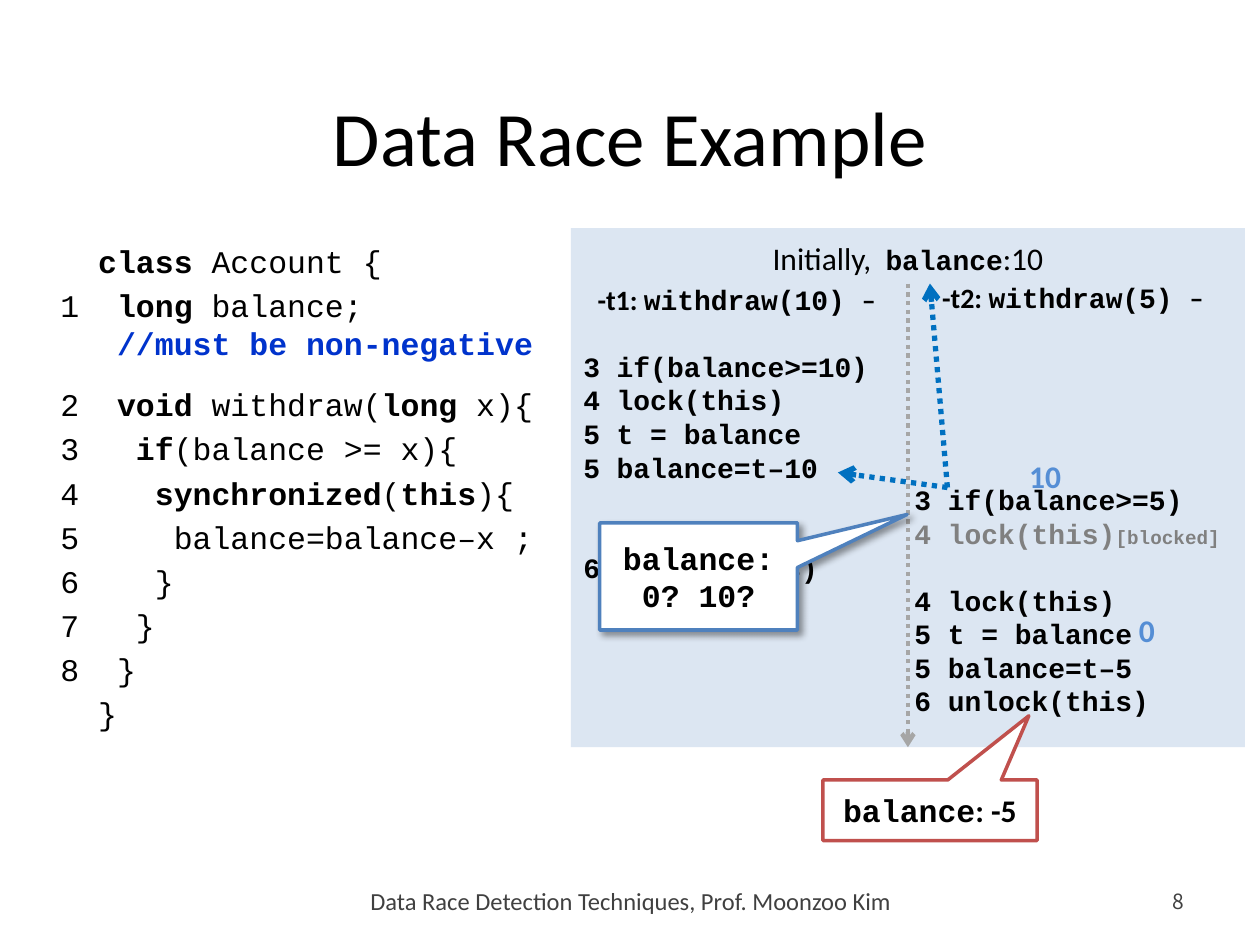
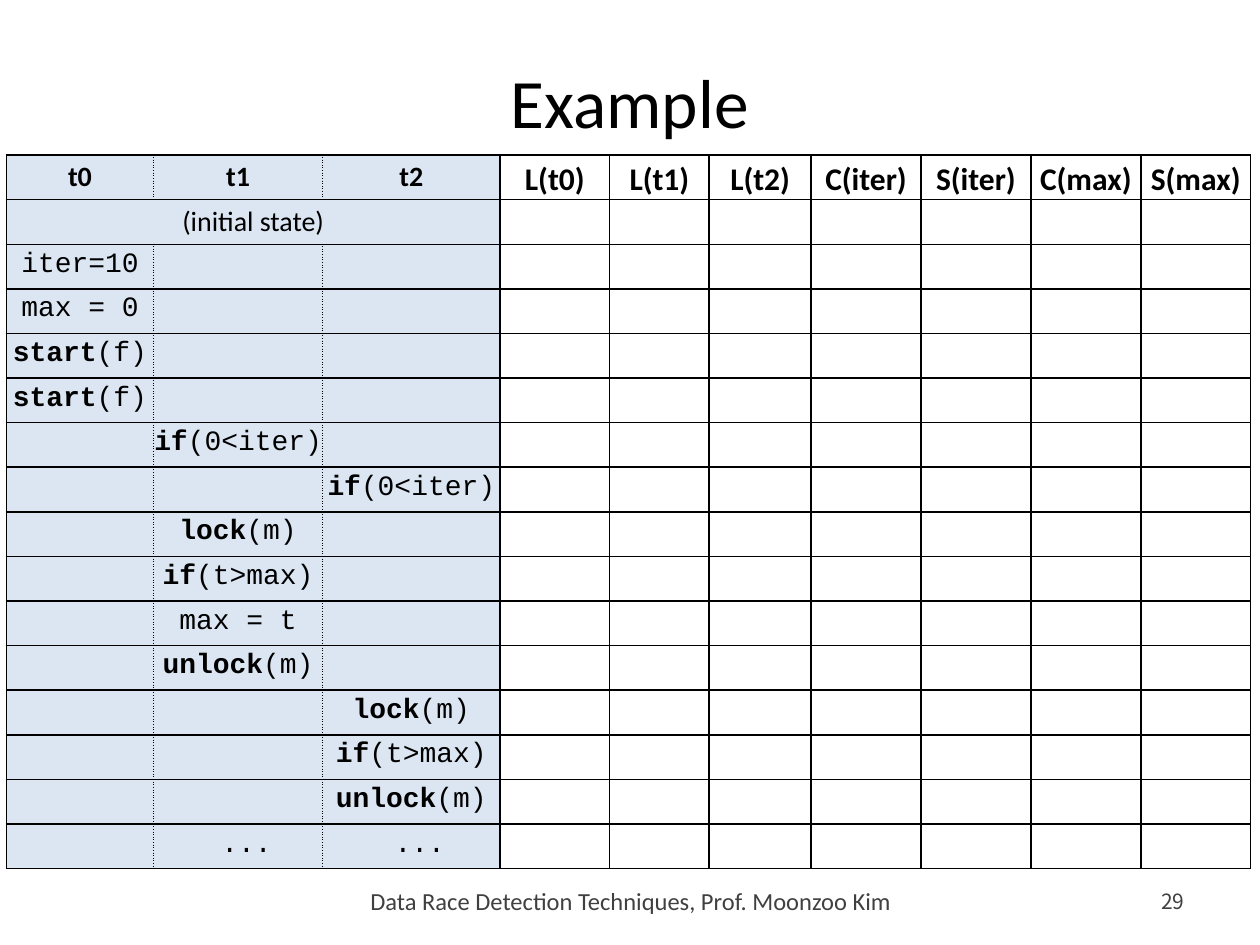
from pptx import Presentation
from pptx.dml.color import RGBColor as Rgb
from pptx.enum.dml import MSO_LINE as Dash
from pptx.enum.shapes import MSO_CONNECTOR as Link, MSO_SHAPE as Kind
from pptx.enum.text import MSO_ANCHOR as Anchor, PP_ALIGN as Align
from pptx.oxml import parse_xml
from pptx.oxml.ns import nsdecls
from pptx.util import Pt

HUES = {
    "black": "000000", "white": "FFFFFF", "panel": "DCE6F2", "note": "0033CC",
    "axis": "A6A6A6", "arrow": "0070C0", "value": "558ED5", "dim": "808080",
    "foot": "404040", "blue": "4F81BD", "red": "C0504D",
}
SANS, MONO, PAGE = "Calibri", "Courier New", "Noto Sans CJK KR"
TITLE = {"name": SANS, "size": Pt(44)}
FOOT = {"name": SANS, "size": Pt(14), "hue": "foot"}
CODE = {"name": MONO, "size": Pt(18)}
STEP = {"name": MONO, "size": Pt(16), "bold": True}
HEAD = STEP | {"name": SANS}
VALUE = {"name": SANS, "size": Pt(18), "bold": True, "hue": "value"}
MID = {"alignment": Align.CENTER}
CHAR, LINE = 10.8, 19.2

SOURCE = [
    ("", 2, "*class* Account {"), ("1", 3, "*long* balance;"),
    ("2", 3, "*void* withdraw(*long* x){"), ("3", 4, "*if*(balance >= x){"),
    ("4", 5, "*synchronized*(*this*){"), ("5", 6, "balance=balance–x ;"),
    ("6", 5, "}"), ("7", 4, "}"), ("8", 3, "}"), ("", 2, "}"),
]
FIRST = [(1, "3 if(balance>=10)"), (0, "4 lock(this)"), (0, "5 t = balance"),
         (0, "5 balance=t–10"), (2, "6 unlock(this)")]
SECOND = [(5, "3 if(balance>=5)"), (0, "4 lock(this)[blocked]"),
          (1, "4 lock(this)"), (0, "5 t = balance"), (0, "5 balance=t–5"),
          (0, "6 unlock(this)")]
HEADS = ["t0", "t1", "t2", "L(t0)", "L(t1)", "L(t2)", "C(iter)", "S(iter)",
         "C(max)", "S(max)"]
WIDTHS = [84.2, 96.5, 101.5, 62.6, 56.9, 58.3] + [62.8] * 4
TRACE = [
    {0: "iter=10"}, {0: "max = 0"}, {0: "*start*(f)"}, {0: "*start*(f)"},
    {1: "*if*(0<iter)"}, {2: "*if*(0<iter)"}, {1: "*lock*(m)"},
    {1: "*if*(t>max)"}, {1: "max = t"}, {1: "*unlock*(m)"}, {2: "*lock*(m)"},
    {2: "*if*(t>max)"}, {2: "*unlock*(m)"}, {1: " ...", 2: " ..."},
]


def tint(hue):
    return Rgb.from_string(HUES[hue])


def apply(item, style):
    for key, val in style.items():
        if key == "hue":
            item.color.rgb = tint(val)
        else:
            setattr(item, key, val)


def mark(text, style):
    parts = enumerate(text.split("*"))
    return [(part, style | {"bold": pos % 2 == 1}) for pos, part in parts if part]


def write(para, runs, form):
    apply(para, form)
    for text, style in runs:
        if text == "\n":
            para.add_line_break()
            continue
        run = para.add_run()
        run.text = text
        apply(run.font, {"hue": "black"} | style)


def fill(frame, paras):
    for pos, (runs, form) in enumerate(paras):
        write(frame.paragraphs[0] if pos == 0 else frame.add_paragraph(), runs, form)


def label(slide, box, paras, anchor=Anchor.TOP):
    frame = slide.shapes.add_textbox(*map(Pt, box)).text_frame
    apply(frame, {"word_wrap": True, "vertical_anchor": anchor})
    fill(frame, paras)
    return frame


def block(slide, kind, box, hue, edge=None):
    shape = slide.shapes.add_shape(kind, *map(Pt, box))
    shape.shadow.inherit = False
    shape.fill.solid()
    shape.fill.fore_color.rgb = tint(hue)
    if edge:
        apply(shape.line, {"hue": edge, "width": Pt(2)})
    else:
        shape.line.fill.background()
    return shape


def bubble(slide, box, tip, edge, paras):
    shape = block(slide, Kind.RECTANGULAR_CALLOUT, box, "white", edge)
    for pos, val in enumerate(tip):
        shape.adjustments[pos] = val
    apply(shape.text_frame, {"vertical_anchor": Anchor.MIDDLE, "word_wrap": True})
    fill(shape.text_frame, paras)
    return shape


def shade(shape):
    props = shape._element.spPr
    props.remove(props.find("{*}effectLst"))
    props.append(parse_xml(
        f'<a:effectLst {nsdecls("a")}><a:outerShdw blurRad="{Pt(4)}" dist="{Pt(3)}" '
        f'dir="2700000" algn="tl" rotWithShape="0"><a:srgbClr val="{HUES["black"]}">'
        '<a:alpha val="40000"/></a:srgbClr></a:outerShdw></a:effectLst>'))


def arrow(slide, start, end, hue, width, goal=None):
    link = slide.shapes.add_connector(Link.STRAIGHT, *map(Pt, start + end))
    if goal:
        link.end_connect(goal, 2)
    apply(link.line, {"hue": hue, "width": Pt(width), "dash_style": Dash.ROUND_DOT})
    link.line._get_or_add_ln().append(
        parse_xml(f'<a:tailEnd {nsdecls("a")} type="arrow"/>'))
    link._element.spPr.append(parse_xml(f'<a:effectLst {nsdecls("a")}/>'))


def base(deck, title, size, height, page):
    slide = deck.slides.add_slide(deck.slide_layouts[6])
    label(slide, (36, 32.4, 648, height),
          [([(title, TITLE | {"size": Pt(size)})], MID)], Anchor.MIDDLE)
    label(slide, (116, 500.4, 489, 28.8),
          [([("Data Race Detection Techniques, Prof. Moonzoo Kim", FOOT)], MID)],
          Anchor.MIDDLE)
    label(slide, (643.7, 500.4, 40.3, 28.8),
          [([(page, FOOT | {"name": PAGE, "size": Pt(12)})],
            {"alignment": Align.RIGHT})], Anchor.MIDDLE)
    return slide


def listing(slide):
    paras = []
    for num, col, text in SOURCE:
        runs = [(num + "\t", CODE)] + mark(text, CODE)
        if num == "1":
            note = CODE | {"bold": True, "hue": "note"}
            runs += [("\n", {}), ("\t//must be non-negative", note)]
        gap = 13.4 if num == "2" else 3.6
        paras.append((runs, {"line_spacing": Pt(21.6), "space_before": Pt(gap)}))
    frame = label(slide, (27.4, 129.6, 287.3, 297.4), paras, Anchor.MIDDLE)
    for para, (num, col, text) in zip(frame.paragraphs, SOURCE):
        para._p.get_or_add_pPr().append(parse_xml(
            f'<a:tabLst {nsdecls("a")}><a:tab pos="{Pt(col * CHAR)}" algn="l"/>'
            '</a:tabLst>'))


def thread(slide, box, name, call, steps):
    even = {"line_spacing": Pt(LINE)}
    paras = [([(name, HEAD), (call, STEP), ("– ", HEAD)], MID | even)]
    for gap, text in steps:
        main, sep, tail = text.partition("[")
        dim = {"hue": "dim"} if sep else {}
        runs = [(main, STEP | dim)]
        if sep:
            runs.append((sep + tail, STEP | dim | {"size": Pt(11)}))
        paras.append((runs, even | {"space_before": Pt(gap * LINE)}))
    label(slide, box, paras)


def race(deck):
    slide = base(deck, "Data Race Example", 44, 90, "8")
    listing(slide)
    panel = block(slide, Kind.RECTANGLE, (326.2, 130.3, 385.2, 296.7), "panel")
    arrow(slide, (518.8, 162), (518.8, 427), "axis", 2.5, panel)
    big = {"name": SANS, "size": Pt(18)}
    label(slide, (326.2, 133.2, 385.2, 28.8),
          [([("Initially, ", big), (" ", big), ("balance", STEP), (":10", big)], MID)])
    thread(slide, (326.2, 157.7, 193, 201), "-t1: ", "withdraw(10) ", FIRST)
    thread(slide, (515.5, 157, 198.7, 278.6), "-t2: ", "withdraw(5) ", SECOND)
    bold = CODE | {"bold": True}
    shade(bubble(slide, (342.7, 298.8, 113, 61.2), (1.055, -0.579), "blue",
                 [([(text, bold)], MID) for text in ("balance:", "0? 10?")]))
    bubble(slide, (470.2, 445.7, 122.4, 34.6), (0.462, -1.559), "red",
           [([("balance", bold), (": -5", bold | {"name": SANS})], MID)])
    for end in ((478.8, 270), (531.4, 162)):
        arrow(slide, (541.4, 278.6), end, "arrow", 3)
    for text, left, top in (("10", 581, 257.8), ("0", 643.7, 345.6)):
        label(slide, (left, top, 67.7, 28.8), [([(text, VALUE)], {})])


def border(cell, dots):
    props = cell._tc.get_or_add_tcPr()
    for side in "LRTB":
        dash = "sysDot" if side in dots else "solid"
        props.append(parse_xml(
            f'<a:ln{side} {nsdecls("a")} w="{Pt(1)}"><a:solidFill><a:srgbClr '
            f'val="{HUES["black"]}"/></a:solidFill><a:prstDash val="{dash}"/>'
            f'</a:ln{side}>'))


def put(cell, runs):
    write(cell.text_frame.paragraphs[0], runs, MID | {"line_spacing": 1.15})


def states(deck):
    slide = base(deck, "Example", 39.6, 50.4, "29")
    count = len(TRACE) + 2
    grid = slide.shapes.add_table(count, len(HEADS), Pt(3.6), Pt(88.6),
                                  Pt(sum(WIDTHS)), Pt(count * 25.5)).table
    for col, width in zip(grid.columns, WIDTHS):
        col.width = Pt(width)
    for row in range(count):
        grid.rows[row].height = Pt(25.5)
        for col in range(len(HEADS)):
            cell = grid.cell(row, col)
            apply(cell, {f"margin_{side}": 0
                         for side in ("left", "right", "top", "bottom")})
            dots = "" if row == 1 else ("R", "LR", "L")[col] if col < 3 else ""
            border(cell, dots)
            cell.fill.solid()
            cell.fill.fore_color.rgb = tint("panel" if col < 3 else "white")
    for col, text in enumerate(HEADS):
        put(grid.cell(0, col), [(text, HEAD | {"size": Pt(16 if col < 3 else 18)})])
    grid.cell(1, 0).merge(grid.cell(1, 2))
    put(grid.cell(1, 0), [("(initial state)", HEAD | {"bold": False})])
    for row, steps in enumerate(TRACE, 2):
        for col, text in steps.items():
            put(grid.cell(row, col), mark(text, STEP))


def main():
    deck = Presentation()
    apply(deck, {"slide_width": Pt(720), "slide_height": Pt(540)})
    race(deck)
    states(deck)
    deck.save("out.pptx")


if __name__ == "__main__":
    main()
